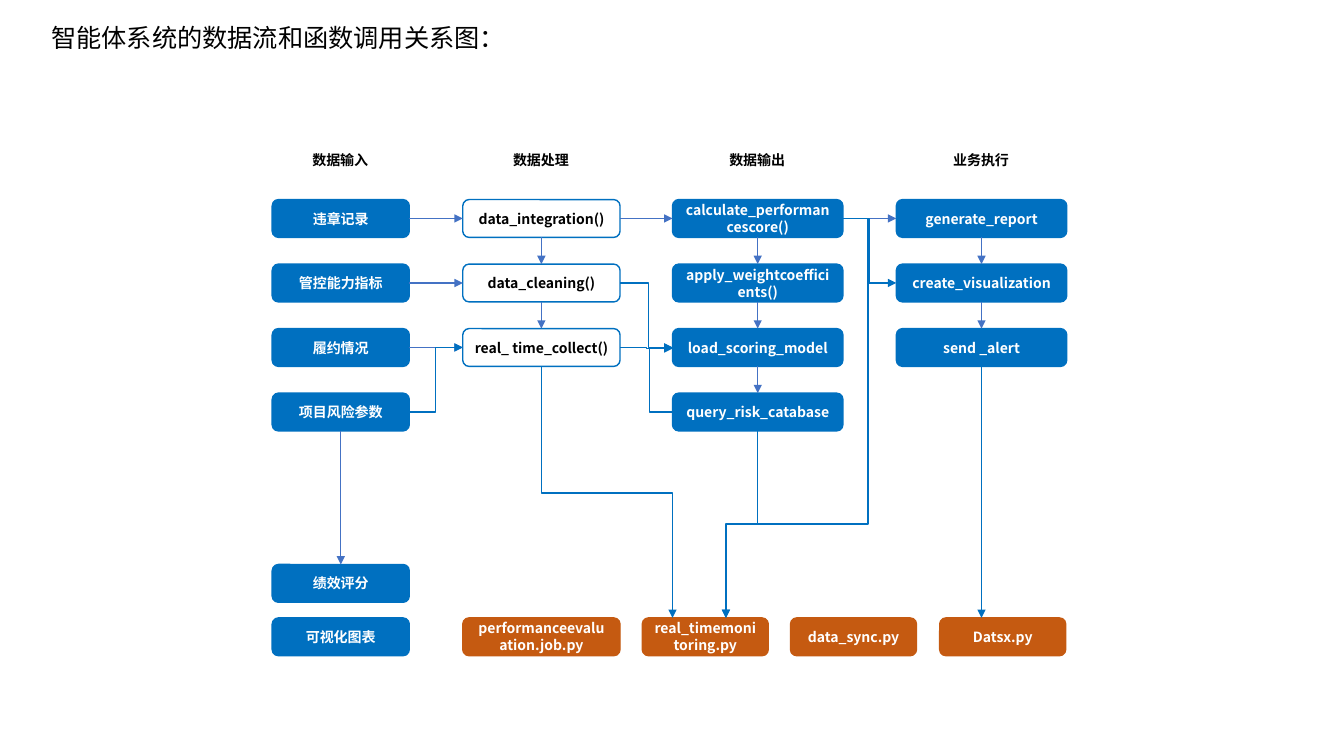
from dataclasses import dataclass
from lxml.etree import SubElement
from pptx import Presentation
from pptx.dml.color import RGBColor
from pptx.enum.shapes import MSO_CONNECTOR as Link, MSO_SHAPE as Preset
from pptx.enum.text import MSO_ANCHOR as Anchor, PP_ALIGN as Align
from pptx.oxml.ns import qn
from pptx.util import Inches, Pt


@dataclass(frozen=True)
class Theme:
    font: str = "Noto Sans CJK SC"
    blue: str = "0070C0"
    arrow: str = "4472C4"
    orange: str = "C55A11"
    white: str = "FFFFFF"
    black: str = "000000"
    title_size: int = 18
    label_size: int = 10
    line_width: int = 1


THEME = Theme()
TITLE = "智能体系统的数据流和函数调用关系图："
COLUMNS = [
    ("数据输入", 2.7, 1.36, ["违章记录", "管控能力指标", "履约情况", "项目风险参数", "绩效评分", "可视化图表"]),
    ("数据处理", 4.59, 1.56, ["data_integration()", "data_cleaning()", "real_ time_collect()"]),
    ("数据输出", 6.67, 1.69, ["calculate_performancescore()", "apply_weightcoefficients()",
                          "load_scoring_model", "query_risk_catabase"]),
    ("业务执行", 8.89, 1.69, ["generate_report", "create_visualization", "send _alert"]),
]
SCRIPTS = [
    ("performanceevaluation.job.py", 4.59, 1.56),
    ("real_timemonitoring.py", 6.37, 1.25),
    ("data_sync.py", 7.84, 1.25),
    ("Datsx.py", 9.32, 1.25),
]
ROW_TOPS = [1.98 + 0.64 * row for row in range(4)] + [5.6, 6.13]
BOX_HEIGHT = 0.375
SCRIPT_TOP = ROW_TOPS[-1]
ACROSS = [(0, 0), (0, 1), (0, 2), (1, 0), (2, 0)]
DOWN = [(0, 3), (1, 0), (1, 1), (2, 0), (2, 1), (2, 2), (3, 0), (3, 1)]

deck = Presentation()
deck.slide_width, deck.slide_height = Inches(13.33), Inches(7.5)
page = deck.slides.add_slide(deck.slide_layouts[6])


def write(shape, text, size, color, bold):
    shape.text_frame.text = text
    para = shape.text_frame.paragraphs[0]
    span = para.runs[0]
    span.font.size, span.font.bold = Pt(size), bold
    span.font.color.rgb = RGBColor.from_string(color)
    span.font.name = THEME.font
    SubElement(span.font._element, qn("a:ea"), typeface=THEME.font)
    return para


def add_text(text, left, top, width, height, size, bold, wrap):
    box = page.shapes.add_textbox(Inches(left), Inches(top), Inches(width), Inches(height))
    box.text_frame.word_wrap = wrap
    write(box, text, size, THEME.black, bold)


def add_step(text, left, top, width, fill, line):
    box = page.shapes.add_shape(Preset.ROUNDED_RECTANGLE, Inches(left), Inches(top),
                                Inches(width), Inches(BOX_HEIGHT))
    box.shadow.inherit = False
    if fill:
        box.fill.solid()
        box.fill.fore_color.rgb = RGBColor.from_string(fill)
    else:
        box.fill.background()
    box.line.color.rgb = RGBColor.from_string(line)
    box.line.width = Pt(THEME.line_width)
    box.text_frame.word_wrap = True
    box.text_frame.vertical_anchor = Anchor.MIDDLE
    color = THEME.white if fill else THEME.black
    write(box, text, THEME.label_size, color, True).alignment = Align.CENTER


def add_arrow(start, end, color, kind=Link.STRAIGHT):
    arrow = page.shapes.add_connector(kind, *map(Inches, (*start, *end)))
    arrow.line.color.rgb = RGBColor.from_string(color)
    arrow.line.width = Pt(THEME.line_width)
    SubElement(arrow.line._get_or_add_ln(), qn("a:tailEnd"), type="triangle")
    SubElement(arrow._element.spPr, qn("a:effectLst"))
    return arrow


def set_bends(arrow, *shares):
    geometry = arrow._element.spPr.find(qn("a:prstGeom"))
    geometry.set("prst", f"bentConnector{len(shares) + 2}")
    guides = geometry.find(qn("a:avLst"))
    if guides is None:
        guides = SubElement(geometry, qn("a:avLst"))
    for number, share in enumerate(shares, 1):
        SubElement(guides, qn("a:gd"), name=f"adj{number}", fmla=f"val {round(share * 100000)}")


def bend_across(start, end, via_x, via_y=None):
    shares = [(via_x - start[0]) / (end[0] - start[0])]
    if via_y is not None:
        shares.append((via_y - start[1]) / (end[1] - start[1]))
    set_bends(add_arrow(start, end, THEME.blue, Link.ELBOW), *shares)


def bend_down(start, end, via_y):
    (x0, y0), (x1, y1) = start, end
    middle_x, middle_y = (x0 + x1) / 2, (y0 + y1) / 2
    half_run, half_shift = (y1 - y0) / 2, (x1 - x0) / 2
    arrow = add_arrow((middle_x - half_run, middle_y + half_shift),
                      (middle_x + half_run, middle_y - half_shift), THEME.blue, Link.ELBOW)
    arrow._element.spPr.find(qn("a:xfrm")).set("rot", str(90 * 60000))
    set_bends(arrow, (via_y - y0) / (y1 - y0))


def left_of(column, row):
    return COLUMNS[column][1], ROW_TOPS[row] + BOX_HEIGHT / 2


def right_of(column, row):
    x, y = left_of(column, row)
    return x + COLUMNS[column][2], y


def top_of(column, row):
    return COLUMNS[column][1] + COLUMNS[column][2] / 2, ROW_TOPS[row]


def bottom_of(column, row):
    x, y = top_of(column, row)
    return x, y + BOX_HEIGHT


add_text(TITLE, 0.41, 0.17, 6.67, 0.4, THEME.title_size, False, True)
for column, (heading, left, width, steps) in enumerate(COLUMNS):
    add_text(heading, left + width / 2 - 0.38, 1.45, 0.76, 0.27, THEME.label_size, True, False)
    for step, top in zip(steps, ROW_TOPS):
        add_step(step, left, top, width, None if column == 1 else THEME.blue, THEME.blue)
for script, left, width in SCRIPTS:
    add_step(script, left, SCRIPT_TOP, width, THEME.orange, THEME.orange)

for column, row in ACROSS:
    add_arrow(right_of(column, row), left_of(column + 1, row), THEME.arrow)
for column, row in DOWN:
    add_arrow(bottom_of(column, row), top_of(column, row + 1), THEME.arrow)
alert = bottom_of(3, 2)
add_arrow(alert, (alert[0], SCRIPT_TOP), THEME.blue)

model = left_of(2, 2)
query_x, query_y = left_of(2, 3)
monitor = (7.2, SCRIPT_TOP)
bend_across(right_of(0, 3), left_of(1, 2), 4.32)
bend_across(right_of(1, 1), model, 6.43)
bend_across(right_of(1, 2), (model[0], model[1] + 0.01), 6.41)
bend_across((query_x + 0.02, query_y), model, 6.44)
bend_across(right_of(2, 0), left_of(3, 1), 8.62)
bend_across(right_of(2, 0), monitor, 8.61, 5.2)
bend_down(bottom_of(1, 2), (model[0], SCRIPT_TOP), 4.89)
bend_down(bottom_of(2, 3), monitor, 5.2)

deck.save("out.pptx")
